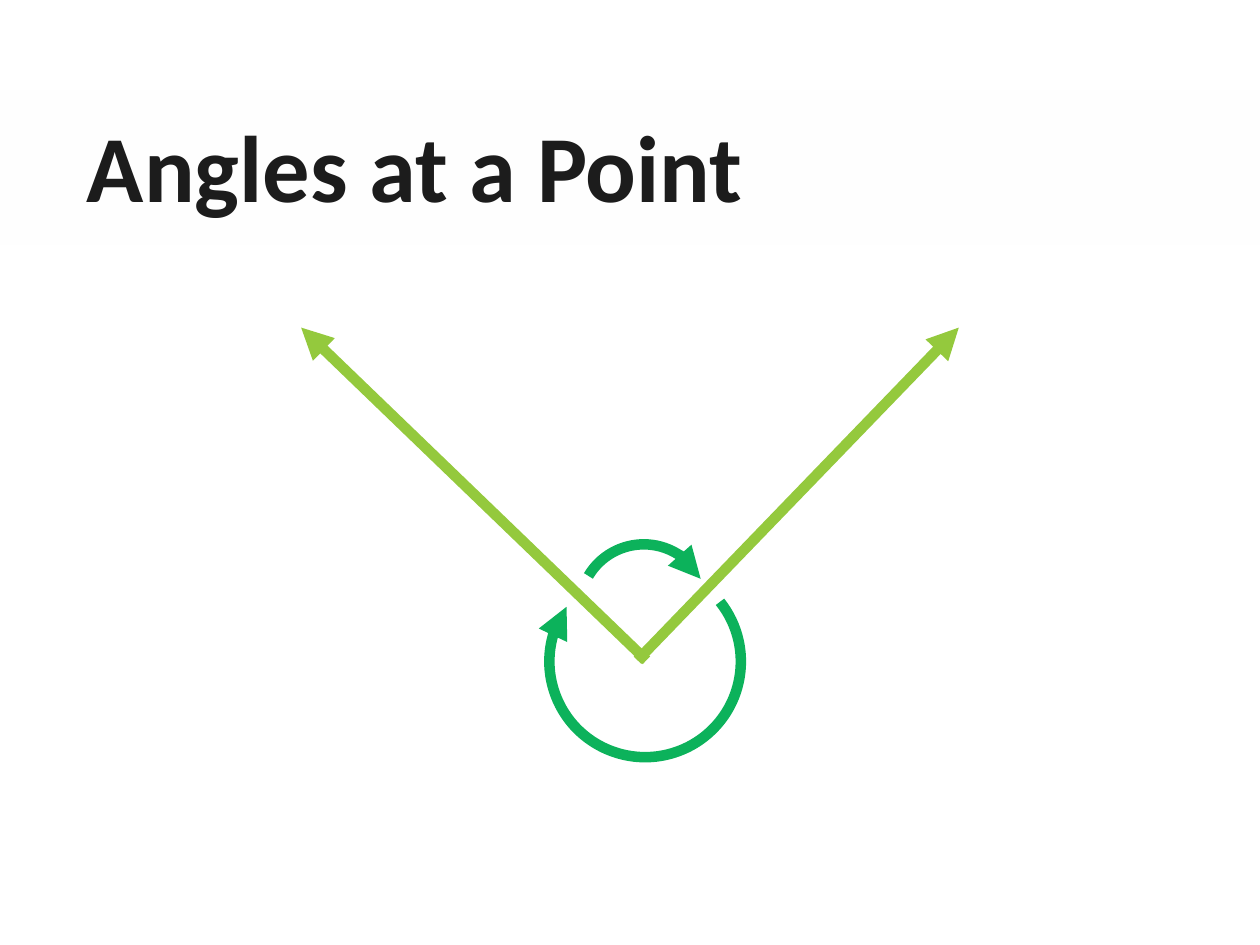
from dataclasses import dataclass

from lxml import etree
from pptx import Presentation
from pptx.dml.color import RGBColor
from pptx.enum.shapes import MSO_CONNECTOR, MSO_SHAPE
from pptx.enum.text import MSO_ANCHOR
from pptx.oxml.ns import qn
from pptx.slide import Slide
from pptx.util import Pt

STRAIGHT = MSO_CONNECTOR.STRAIGHT
ARC = MSO_SHAPE.ARC
RECTANGLE = MSO_SHAPE.RECTANGLE
MIDDLE = MSO_ANCHOR.MIDDLE

RAY_COLOR = "94C93D"
ARC_COLOR = "0CB25B"
BAND_COLOR = "FEFEFE"
TITLE_COLOR = "1C1C1C"
STROKE_WIDTH = 6


@dataclass
class Ray:
    tip: tuple[float, float]
    vertex: tuple[float, float]


@dataclass
class AngleArc:
    left: float
    top: float
    diameter: float
    rotation: float
    start: float
    end: float


RAYS = [
    Ray((172.1, 187.2), (369.4, 377.3)),
    Ray((547.9, 187.2), (364.3, 377.3)),
]
ARCS = [
    AngleArc(331.2, 311, 73.4, 300.5, 162, 19.12),
    AngleArc(313.9, 323.3, 109.4, 77.7, 146.25, 82.28),
]


def color(value: str) -> RGBColor:
    return RGBColor.from_string(value)


def style_arrow(shape, stroke: str, arrow_end: str) -> None:
    shape.line.color.rgb = color(stroke)
    shape.line.width = Pt(STROKE_WIDTH)
    line_element = shape.line._get_or_add_ln()
    etree.SubElement(line_element, qn(arrow_end), type="triangle")


def draw_band(slide: Slide) -> None:
    band = slide.shapes.add_shape(RECTANGLE, Pt(0), Pt(51.8), Pt(720), Pt(87.8))
    band.shadow.inherit = False
    band.line.fill.background()
    band.fill.solid()
    band.fill.fore_color.rgb = color(BAND_COLOR)
    fill_color = band.fill._xPr.find(qn("a:solidFill"))[0]
    etree.SubElement(fill_color, qn("a:alpha"), val="69000")


def draw_title(slide: Slide, text: str) -> None:
    title = slide.shapes.add_textbox(Pt(49.7), Pt(46.1), Pt(620.6), Pt(104.4))
    frame = title.text_frame
    frame.word_wrap = True
    frame.vertical_anchor = MIDDLE
    frame.margin_left = frame.margin_right = Pt(0)
    frame.margin_top = frame.margin_bottom = Pt(0)
    paragraph = frame.paragraphs[0]
    paragraph.text = text
    paragraph.line_spacing = 0.9
    paragraph.font.name = "Calibri"
    paragraph.font.size = Pt(54)
    paragraph.font.bold = True
    paragraph.font.color.rgb = color(TITLE_COLOR)


def draw_ray(slide: Slide, ray: Ray) -> None:
    points = [Pt(value) for value in ray.tip + ray.vertex]
    connector = slide.shapes.add_connector(STRAIGHT, *points)
    style_arrow(connector, RAY_COLOR, "a:headEnd")
    etree.SubElement(connector._element.spPr, qn("a:effectLst"))


def draw_arc(slide: Slide, arc: AngleArc) -> None:
    diameter = Pt(arc.diameter)
    shape = slide.shapes.add_shape(ARC, Pt(arc.left), Pt(arc.top), diameter, diameter)
    shape.adjustments[0] = arc.start
    shape.adjustments[1] = arc.end
    shape.rotation = arc.rotation
    shape.shadow.inherit = False
    shape.fill.background()
    style_arrow(shape, ARC_COLOR, "a:tailEnd")


def main() -> None:
    presentation = Presentation()
    presentation.slide_width = Pt(720)
    presentation.slide_height = Pt(540)
    slide = presentation.slides.add_slide(presentation.slide_layouts[6])
    draw_band(slide)
    draw_title(slide, "Angles at a Point")
    for ray in RAYS:
        draw_ray(slide, ray)
    for arc in ARCS:
        draw_arc(slide, arc)
    presentation.save("out.pptx")


if __name__ == "__main__":
    main()
